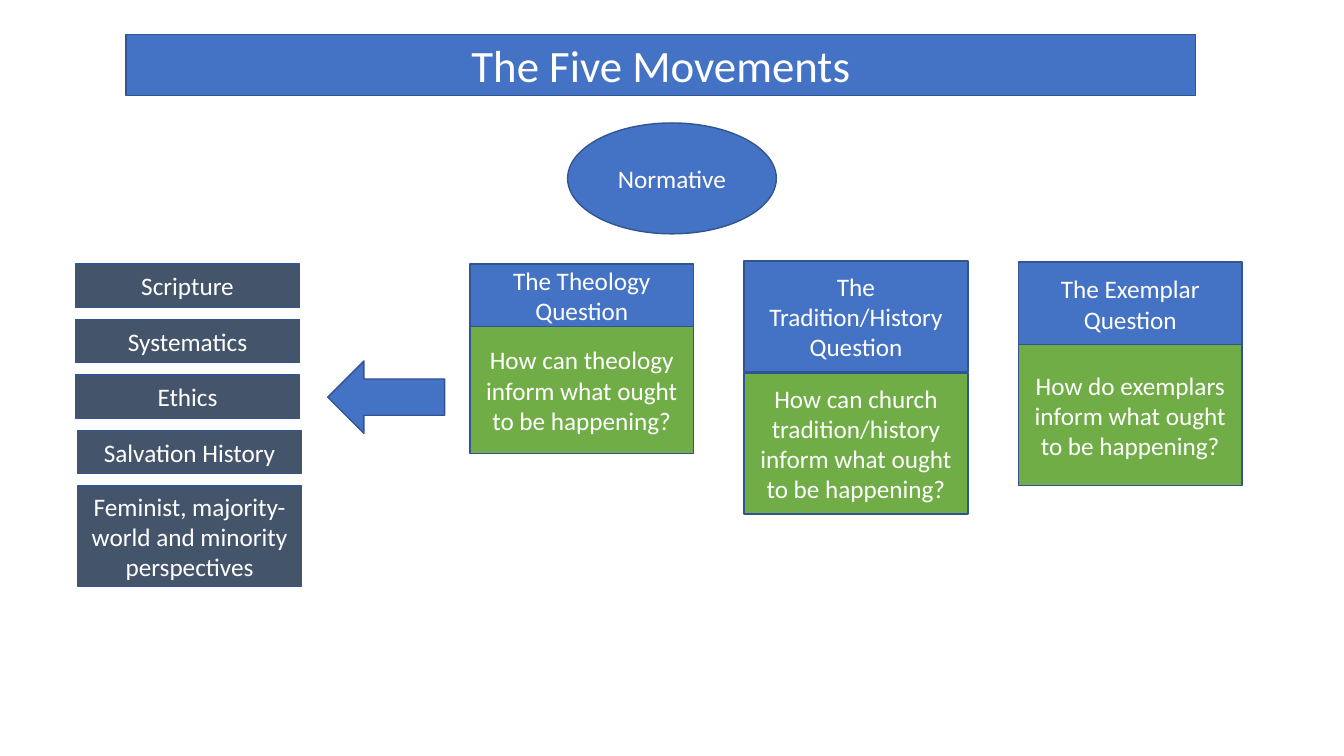
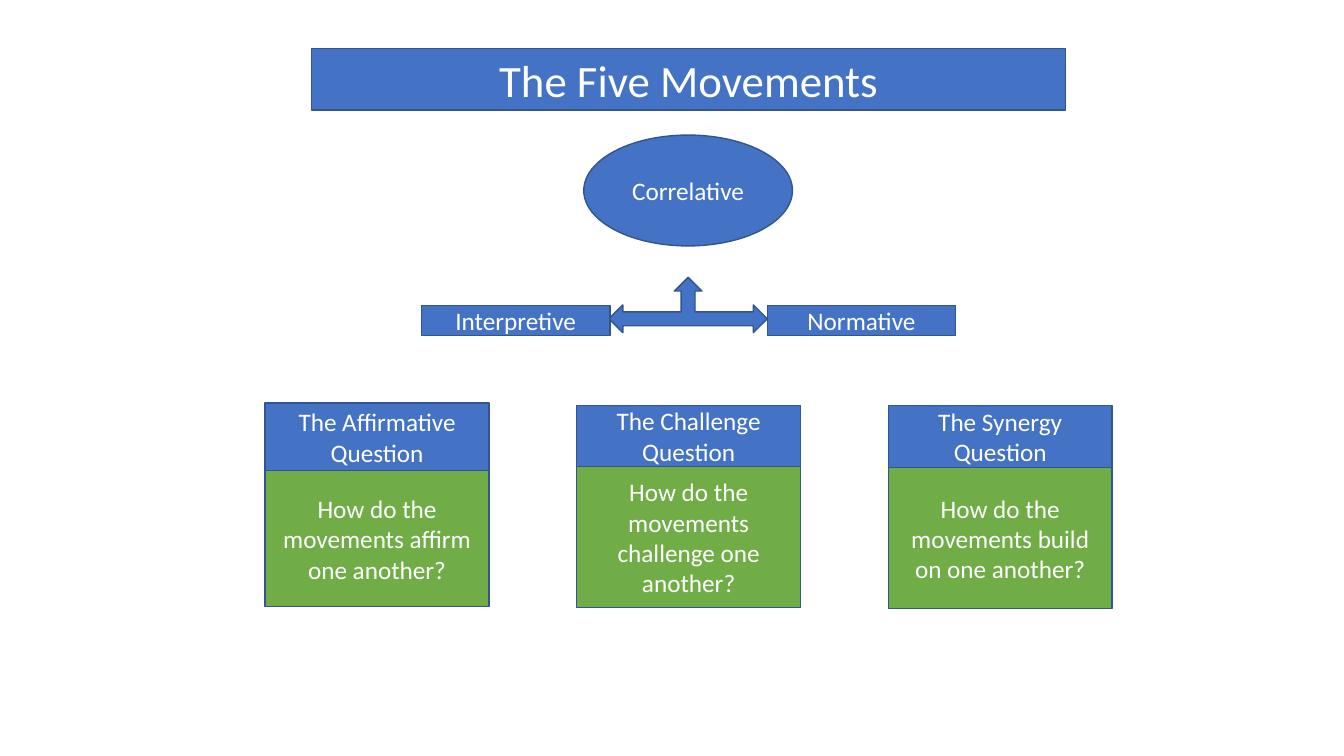
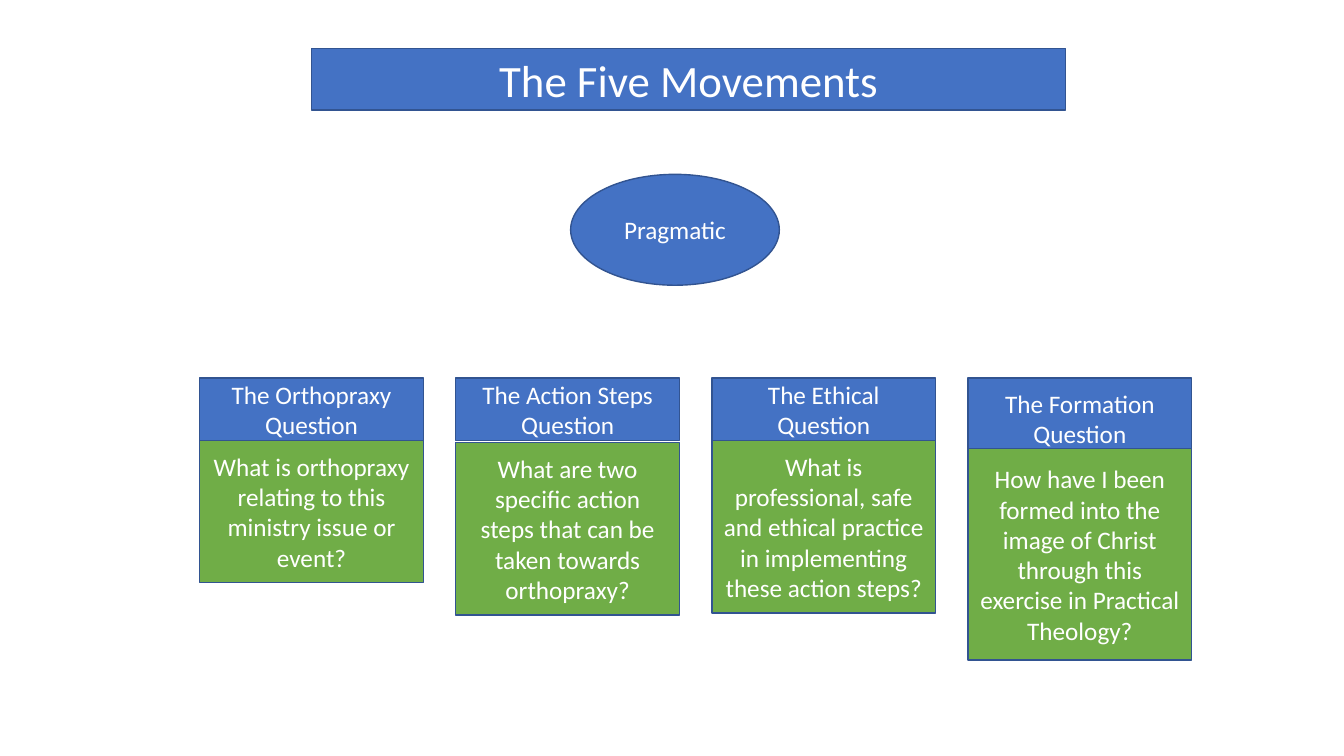
import pptx
import pptx.dml.color
import pptx.enum.shapes
import pptx.enum.text
import pptx.util

Inches = pptx.util.Inches
Shape = pptx.enum.shapes.MSO_SHAPE

COLORS = {
    "blue": "4472C4",
    "green": "70AD47",
    "slate": "44546A",
    "outline": "325491",
    "text": "FFFFFF",
}
FONT = "Calibri"
TITLE = "The Five Movements"
TITLE_HEIGHT = 0.61
OVAL_WIDTH, OVAL_HEIGHT = 2.07, 1.1
BOX_WIDTH = 2.22


def add_box(shapes, kind, left, top, width, height, text="", fill="blue", size=18):
    """Add an outlined shape, in inches, with centred text if any is given."""
    box = shapes.add_shape(kind, Inches(left), Inches(top), Inches(width), Inches(height))
    box.shadow.inherit = False
    box.fill.solid()
    box.fill.fore_color.rgb = pptx.dml.color.RGBColor.from_string(COLORS[fill])
    box.line.color.rgb = pptx.dml.color.RGBColor.from_string(COLORS["outline"])
    box.line.width = pptx.util.Pt(1)
    if text:
        frame = box.text_frame
        frame.word_wrap = True
        frame.vertical_anchor = pptx.enum.text.MSO_ANCHOR.MIDDLE
        para = frame.paragraphs[0]
        para.text = text
        para.alignment = pptx.enum.text.PP_ALIGN.CENTER
        para.font.name = FONT
        para.font.size = pptx.util.Pt(size)
        para.font.color.rgb = pptx.dml.color.RGBColor.from_string(COLORS["text"])


# Each card: heading, heading top and height, question, question top and height.
movements = [
    {
        "name": "Normative",
        "oval": (5.63, 1.22),
        "title": (1.25, 0.34, 10.61),
        "first_left": 4.66,
        "pitch": 2.72,
        "cards": [
            ("The Theology Question", 2.62, 0.62,
             "How can theology inform what ought to be happening?", 3.24, 1.26),
            ("The Tradition/History Question", 2.59, 1.1,
             "How can church tradition/history inform what ought to be happening?", 3.7, 1.4),
            ("The Exemplar Question", 2.6, 0.83,
             "How do exemplars inform what ought to be happening?", 3.42, 1.4),
        ],
    },
    {
        "name": "Correlative",
        "oval": (5.79, 1.34),
        "title": (3.09, 0.48, 7.48),
        "first_left": 2.63,
        "pitch": 3.09,
        "cards": [
            ("The Affirmative Question", 4, 0.67,
             "How do the movements affirm one another?", 4.67, 1.35),
            ("The Challenge Question", 4.02, 0.61,
             "How do the movements challenge one another?", 4.63, 1.4),
            ("The Synergy Question", 4.02, 0.62,
             "How do the movements build on one another?", 4.64, 1.4),
        ],
    },
    {
        "name": "Pragmatic",
        "oval": (5.66, 1.73),
        "title": (3.09, 0.48, 7.48),
        "first_left": 1.98,
        "pitch": 2.54,
        "cards": [
            ("The Orthopraxy Question", 3.75, 0.62,
             "What is orthopraxy relating to this ministry issue or event?", 4.37, 1.41),
            ("The Action Steps Question", 3.75, 0.62,
             "What are two specific action steps that can be taken towards orthopraxy?", 4.39, 1.71),
            ("The Ethical Question", 3.75, 0.62,
             "What is professional, safe and ethical practice in implementing these action steps?",
             4.37, 1.71),
            ("The Formation Question", 3.75, 0.8,
             "How have I been formed into the image of Christ through this exercise "
             "in Practical Theology?", 4.45, 2.1),
        ],
    },
]

deck = pptx.Presentation()
deck.slide_width = Inches(13.33)
deck.slide_height = Inches(7.5)

# Title, movement and question cards on every slide
pages = {}
for movement in movements:
    page = deck.slides.add_slide(deck.slide_layouts[6])
    pages[movement["name"]] = page
    add_box(page.shapes, Shape.OVAL, *movement["oval"], OVAL_WIDTH, OVAL_HEIGHT, movement["name"])
    add_box(page.shapes, Shape.RECTANGLE, *movement["title"], TITLE_HEIGHT, TITLE, size=32)
    for column, card in enumerate(movement["cards"]):
        heading, heading_top, heading_height, question, question_top, question_height = card
        left = movement["first_left"] + column * movement["pitch"]
        group = page.shapes.add_group_shape()
        add_box(group.shapes, Shape.RECTANGLE, left, heading_top, BOX_WIDTH, heading_height, heading)
        add_box(group.shapes, Shape.RECTANGLE, left, question_top, BOX_WIDTH, question_height,
                question, "green")

# Normative: sources that the theology question draws on
sources = [
    ("Scripture", 0.75, 0.43),
    ("Systematics", 0.75, 0.43),
    ("Ethics", 0.75, 0.43),
    ("Salvation History", 0.77, 0.43),
    ("Feminist, majority-world and minority perspectives", 0.77, 1),
]
normative = pages["Normative"]
source_group = normative.shapes.add_group_shape()
for row, (source, left, height) in enumerate(sources):
    add_box(source_group.shapes, Shape.RECTANGLE, left, 2.62 + row * 0.55, BOX_WIDTH, height,
            source, "slate")
add_box(normative.shapes, Shape.LEFT_ARROW, 3.25, 3.58, 1.16, 0.72)

# Correlative: the two movements that it brings together
link_group = pages["Correlative"].shapes.add_group_shape()
add_box(link_group.shapes, Shape.LEFT_RIGHT_UP_ARROW, 6.04, 2.75, 1.57, 0.55)
for linked, left in (("Interpretive", 4.18), ("Normative", 7.61)):
    add_box(link_group.shapes, Shape.RECTANGLE, left, 3.03, 1.87, 0.3, linked)

deck.save("out.pptx")
